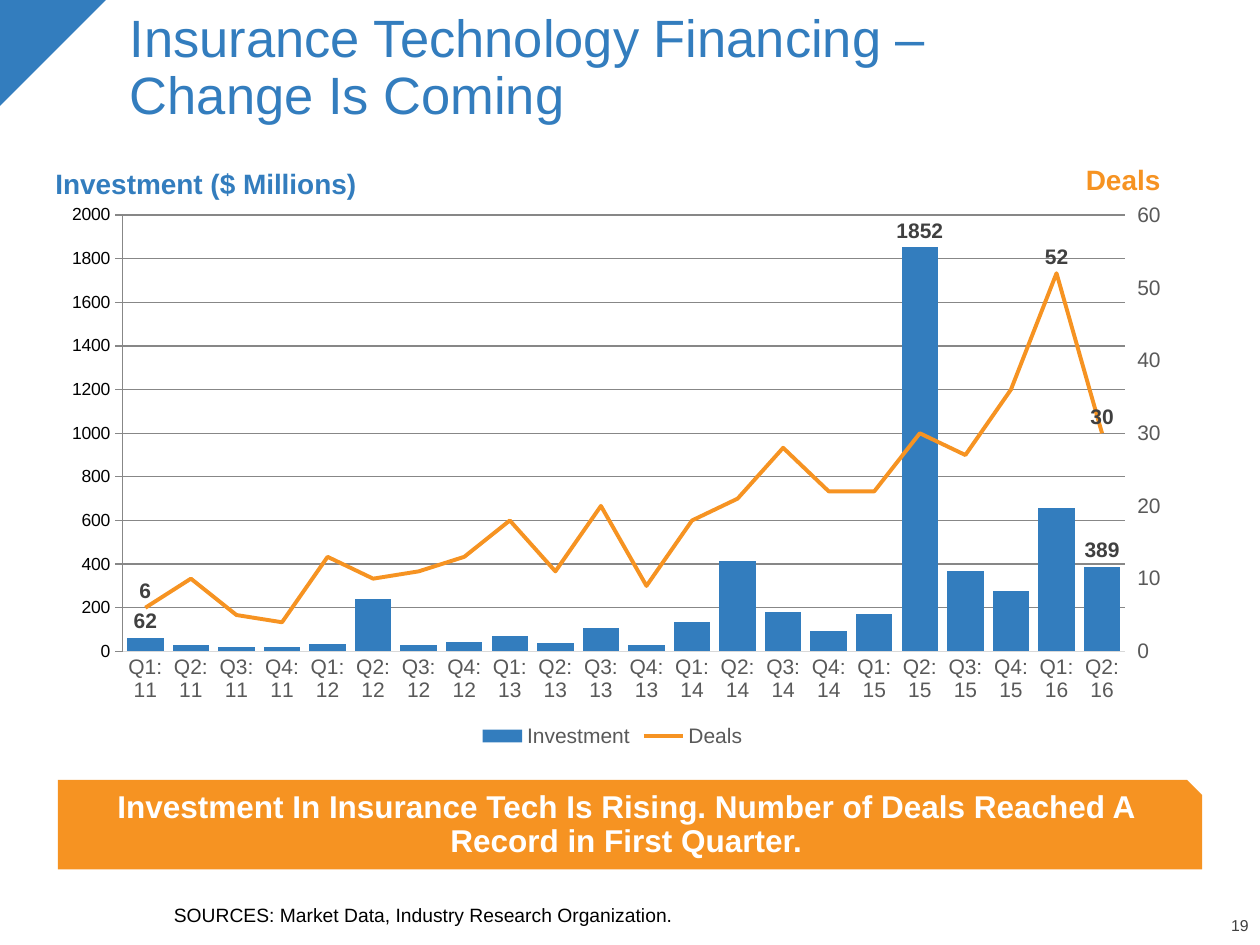
from pptx import Presentation, util as u
from pptx.chart import axis as ax, data as cd
from pptx.dml.color import RGBColor
from pptx.enum import chart as ec, shapes, text
from pptx.oxml import parse_xml

W, H = 10, 7.5
FONT = "Arial"
BLUE, ORANGE, GREY, DARK, RULE = "337DBE", "F69322", "595959", "404040", "D9D9D9"
NS = 'xmlns:c="http://schemas.openxmlformats.org/drawingml/2006/chart"'
INVESTMENT = [62, 29, 22, 18, 32, 240, 31, 44, 71, 37, 107, 29, 133, 415, 180,
              93, 171, 1852, 369, 277, 657, 389]
DEALS = [6, 10, 5, 4, 13, 10, 11, 13, 18, 11, 20, 9, 18, 21, 28, 22, 22, 30,
         27, 36, 52, 30]
QUARTERS = [f"Q{i % 4 + 1}:{11 + i // 4}" for i in range(len(DEALS))]


def rgb(value):
    return RGBColor.from_string(value)


def box(x, y, w, h):
    return [u.Inches(v) for v in (x, y, w, h)]


def style(font, size, color, bold=False):
    font.name, font.size, font.bold = FONT, u.Pt(size), bold
    font.color.rgb = rgb(color)


def write(sp, words, size=16, color=BLUE, bold=False, align=text.PP_ALIGN.LEFT,
          anchor=text.MSO_ANCHOR.TOP, insets=(0, 0, 0, 0), spacing=0.9):
    tf = sp.text_frame
    tf.word_wrap, tf.auto_size = True, text.MSO_AUTO_SIZE.NONE
    tf.vertical_anchor = anchor
    tf.margin_left, tf.margin_top, tf.margin_right, tf.margin_bottom = box(*insets)
    p = tf.paragraphs[0]
    p.alignment, p.line_spacing, p.space_before = align, spacing, u.Pt(0)
    r = p.add_run()
    r.text = words
    style(r.font, size, color, bold)


def add_text(s, words, at, **fmt):
    write(s.shapes.add_textbox(*box(*at)), words, **fmt)


def add_block(s, kind, at, color):
    sp = s.shapes.add_shape(kind, *box(*at))
    sp.shadow.inherit = False
    sp.fill.solid()
    sp.fill.fore_color.rgb = rgb(color)
    sp.line.fill.background()
    return sp


def move_to_right_axis(chart):
    """Turn the second column series into a line on its own value axis."""
    bars = chart.plots[0]
    ser = bars.series[1]._element if hasattr(bars.series[1], "_element") else None
    line = parse_xml(
        f'<c:lineChart {NS}><c:grouping val="standard"/><c:varyColors val="0"/>'
        '<c:marker val="1"/><c:axId val="5001"/><c:axId val="5002"/></c:lineChart>')
    for extra in ser.xpath("c:invertIfNegative"):
        ser.remove(extra)
    ser.getparent().addnext(line)
    line.insert(2, ser)
    scaling = '<c:scaling><c:orientation val="minMax"/></c:scaling>'
    cat = parse_xml(
        f'<c:catAx {NS}><c:axId val="5001"/>{scaling}<c:delete val="1"/>'
        '<c:axPos val="b"/><c:crossAx val="5002"/><c:crosses val="autoZero"/></c:catAx>')
    val = parse_xml(
        f'<c:valAx {NS}><c:axId val="5002"/>{scaling}<c:delete val="0"/>'
        '<c:axPos val="r"/><c:numFmt formatCode="General" sourceLinked="0"/>'
        '<c:majorTickMark val="out"/><c:minorTickMark val="none"/>'
        '<c:tickLblPos val="nextTo"/><c:crossAx val="5001"/><c:crosses val="max"/>'
        '<c:crossBetween val="between"/></c:valAx>')
    chart.value_axis._element.addnext(val)
    val.addnext(cat)
    return ax.ValueAxis(val)


def set_plot_area(chart, x, y, w, h):
    area = chart._chartSpace.chart.plotArea
    for old in area.xpath("c:layout"):
        area.remove(old)
    sizes = "".join(f'<c:{k} val="{v}"/>' for k, v in zip("xywh", (x, y, w, h)))
    area.insert(0, parse_xml(
        f'<c:layout {NS}><c:manualLayout><c:layoutTarget val="inner"/>'
        f'<c:xMode val="edge"/><c:yMode val="edge"/>{sizes}'
        '</c:manualLayout></c:layout>'))


def format_value_axis(axis, top, step, tick):
    axis.minimum_scale, axis.maximum_scale, axis.major_unit = 0, top, step
    axis.major_tick_mark = tick
    axis.format.line.fill.background()
    style(axis.tick_labels.font, 12, GREY)


def label_points(series, points, position):
    for i in points:
        label = series.points[i].data_label
        style(label.font, 12, DARK, bold=True)
        label.position = position
    series.data_labels.show_value = False


def add_combo_chart(s, at):
    data = cd.CategoryChartData()
    data.categories = QUARTERS
    data.add_series("Investment", INVESTMENT)
    data.add_series("Deals", DEALS)
    chart = s.shapes.add_chart(ec.XL_CHART_TYPE.COLUMN_CLUSTERED, *box(*at), data).chart
    style(chart.font, 10, "000000")
    chart.has_title = False
    chart.has_legend = True
    chart.legend.position = ec.XL_LEGEND_POSITION.BOTTOM
    chart.legend.include_in_layout = False
    style(chart.legend.font, 12, GREY)

    # Axes
    right = move_to_right_axis(chart)
    none, out = ec.XL_TICK_MARK.NONE, ec.XL_TICK_MARK.OUTSIDE
    format_value_axis(chart.value_axis, 2000, 200, none)
    format_value_axis(right, 60, 10, out)
    chart.value_axis.has_major_gridlines = True
    cat = chart.category_axis
    cat.major_tick_mark = none
    style(cat.tick_labels.font, 12, GREY)
    for line in (cat.format.line, chart.value_axis.major_gridlines.format.line):
        line.color.rgb, line.width = rgb(RULE), u.Pt(0.75)

    # Series
    bars, lines = chart.plots
    bars.gap_width = 25
    bars.vary_by_categories = False
    investment, deals = bars.series[0], lines.series[0]
    investment.format.fill.solid()
    investment.format.fill.fore_color.rgb = rgb(BLUE)
    deals.format.line.color.rgb, deals.format.line.width = rgb(ORANGE), u.Pt(2.25)
    deals.smooth = False
    deals.marker.style = ec.XL_MARKER_STYLE.NONE
    label_points(investment, (0, 17, 21), ec.XL_LABEL_POSITION.OUTSIDE_END)
    label_points(deals, (0, 20, 21), ec.XL_LABEL_POSITION.ABOVE)
    set_plot_area(chart, 0.07, 0.04, 0.88, 0.78)


def main():
    prs = Presentation()
    prs.slide_width, prs.slide_height = u.Inches(W), u.Inches(H)
    s = prs.slides.add_slide(prs.slide_layouts[5])
    middle, bottom = text.MSO_ANCHOR.MIDDLE, text.MSO_ANCHOR.BOTTOM
    right, center = text.PP_ALIGN.RIGHT, text.PP_ALIGN.CENTER

    # Corner and title
    corner = add_block(s, shapes.MSO_SHAPE.RIGHT_TRIANGLE, (0, 0, 0.84, 0.84), BLUE)
    corner.rotation = 90
    title = s.shapes.title
    title.left, title.top, title.width, title.height = box(0.98, 0.08, 7.2, 0.94)
    write(title, "Insurance Technology Financing – Change Is Coming", size=30,
          anchor=middle, insets=[0.05] * 4)

    # Chart with its axis headings
    add_combo_chart(s, (0.34, 1.53, 9.04, 4.44))
    add_text(s, "Investment ($ Millions)", (0.44, 1.35, 3, 0.24), bold=True)
    add_text(s, "Deals", (6.61, 1.32, 2.6, 0.24), color=ORANGE, bold=True, align=right)

    # Takeaway banner
    banner = add_block(s, shapes.MSO_SHAPE.SNIP_1_RECTANGLE, (0.46, 6.19, 9.08, 0.71), ORANGE)
    write(banner, "Investment In Insurance Tech Is Rising. Number of Deals Reached A "
          "Record in First Quarter.", size=18, color="FFFFFF", bold=True,
          align=center, anchor=middle, insets=(0.1, 0.05, 0.1, 0.1))

    # Sources and page number
    add_text(s, "SOURCES: Market Data, Industry Research Organization.",
             (0.98, 6.99, 7.83, 0.51), size=11, color="000000", anchor=bottom,
             insets=(0.4, 0, 0, 0.15), spacing=0.85)
    add_text(s, "19", (9.43, 7.29, 0.48, 0.13), size=9, color=DARK, align=right,
             anchor=bottom)
    prs.save("out.pptx")


if __name__ == "__main__":
    main()
